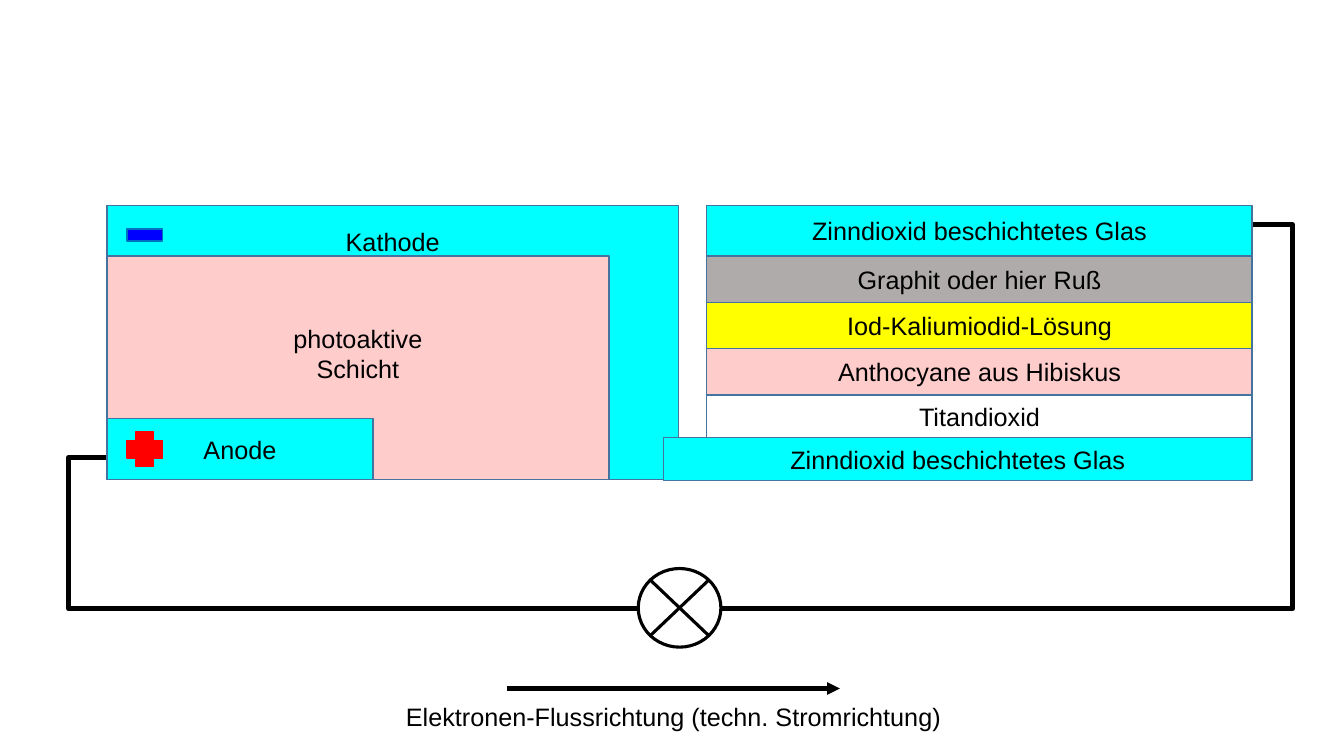
from lxml.etree import SubElement
from pptx import Presentation
from pptx.dml.color import RGBColor
from pptx.enum.shapes import MSO_CONNECTOR as Connector, MSO_SHAPE as Shape
from pptx.enum.text import MSO_ANCHOR as Anchor, MSO_AUTO_SIZE as AutoSize, PP_ALIGN as Align
from pptx.oxml.ns import qn
from pptx.util import Emu, Pt

PX = 9144
COLORS = {
    "black": "000000",
    "white": "FFFFFF",
    "glass": "00FFFF",
    "edge": "43739E",
    "dye": "FFCCCC",
    "iodine": "FFFF00",
    "soot": "AFABAB",
    "plus": "FF0000",
    "minus": "0000FF",
    "minus_edge": "0070C0",
}


def px(*lengths):
    return [Emu(length * PX) for length in lengths]


def color(name):
    return RGBColor.from_string(COLORS[name])


class Diagram:
    font = "Arial"
    size = Pt(18)

    def __init__(self, slide):
        self.shapes = slide.shapes

    def outline(self, shape, name, width):
        shape.line.color.rgb = color(name)
        shape.line.width = Pt(width)

    def label(self, shape, lines, anchor=Anchor.MIDDLE, top=0, bottom=0):
        frame = shape.text_frame
        frame.word_wrap = True
        frame.vertical_anchor = anchor
        frame.margin_left = frame.margin_right = 0
        frame.margin_top, frame.margin_bottom = px(top, bottom)
        for index, line in enumerate(lines):
            para = frame.add_paragraph() if index else frame.paragraphs[0]
            para.alignment = Align.CENTER
            span = para.add_run()
            span.text = line
            span.font.name = self.font
            span.font.size = self.size
            span.font.color.rgb = color("black")

    def block(self, at, fill, lines=(), kind=Shape.RECTANGLE, edge="edge", width=1, **layout):
        box = self.shapes.add_shape(kind, *px(*at))
        box.shadow.inherit = False
        box.fill.solid()
        box.fill.fore_color.rgb = color(fill)
        self.outline(box, edge, width)
        if lines:
            self.label(box, lines, **layout)

    def caption(self, at, text):
        box = self.shapes.add_textbox(*px(*at))
        self.label(box, [text], top=5, bottom=5)
        box.text_frame.auto_size = AutoSize.SHAPE_TO_FIT_TEXT

    def wire(self, points, width):
        start, *rest = points
        builder = self.shapes.build_freeform(*start, scale=PX)
        builder.add_line_segments(rest, close=False)
        wire = builder.convert_to_shape()
        wire.shadow.inherit = False
        wire.fill.background()
        self.outline(wire, "black", width)

    def arrow(self, start, end, width):
        arrow = self.shapes.add_connector(Connector.STRAIGHT, *px(*start, *end))
        self.outline(arrow, "black", width)
        properties = arrow.element.spPr
        SubElement(properties.find(qn("a:ln")), qn("a:tailEnd"), type="triangle")
        SubElement(properties, qn("a:effectLst"))

    def stack(self, right, top, layers):
        for text, fill, left, height in layers:
            self.block((left, top, right - left, height), fill, [text])
            top += height


def main():
    deck = Presentation()
    deck.slide_width, deck.slide_height = px(1333, 750)
    page = deck.slides.add_slide(deck.slide_layouts[6])
    cell = Diagram(page)

    cell.wire([(1242, 223), (1282, 223), (1282, 604), (68, 604), (68, 454), (106, 454)], 3.5)
    cell.block((633, 564, 82, 78), "white", kind=Shape.FLOWCHART_SUMMING_JUNCTION,
               edge="black", width=2.25)

    cell.block((106, 204, 567, 272), "glass", ["Kathode"], anchor=Anchor.TOP, top=20)
    cell.block((106, 254, 498, 222), "dye", ["photoaktive", "Schicht"], bottom=29)
    cell.block((106, 415, 264, 61), "glass", ["Anode"])
    cell.block((126, 428, 35, 35), "plus", kind=Shape.CROSS, edge="plus")
    cell.block((126, 227, 35, 12), "minus", edge="minus_edge")

    cell.stack(1242, 204, [
        ("Zinndioxid beschichtetes Glas", "glass", 701, 50),
        ("Graphit oder hier Ruß", "soot", 701, 46),
        ("Iod-Kaliumiodid-Lösung", "iodine", 701, 46),
        ("Anthocyane aus Hibiskus", "dye", 701, 46),
        ("Titandioxid", "white", 701, 42),
        ("Zinndioxid beschichtetes Glas", "glass", 658, 43),
    ])

    cell.arrow((503, 683), (833, 683), 3)
    cell.caption((355, 691, 626, 40), "Elektronen-Flussrichtung (techn. Stromrichtung)")
    deck.save("out.pptx")


if __name__ == "__main__":
    main()
